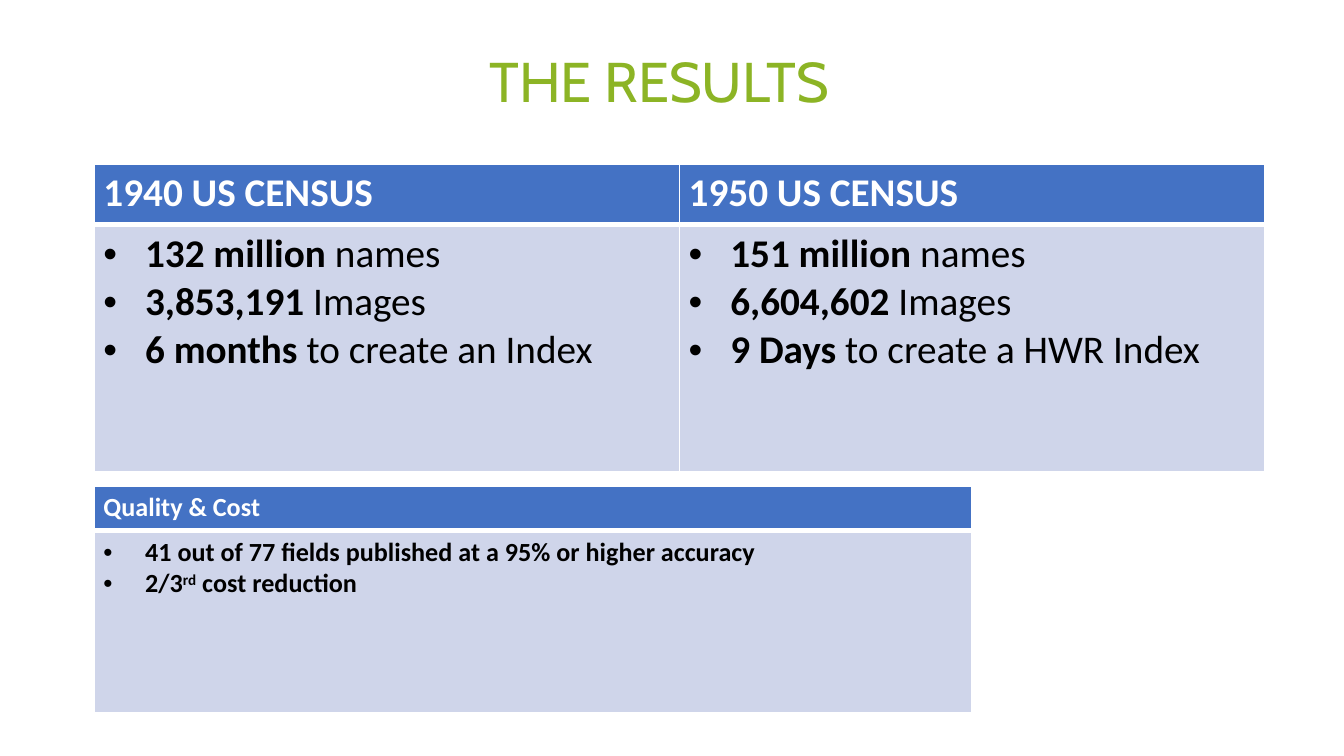
from lxml.etree import SubElement
from pptx import Presentation
from pptx.dml.color import RGBColor
from pptx.enum.text import MSO_ANCHOR, PP_ALIGN
from pptx.oxml.ns import qn
from pptx.util import Inches, Pt

GREEN = RGBColor(0x8C, 0xB4, 0x25)
BLUE = RGBColor(0x44, 0x72, 0xC4)
PALE = RGBColor(0xCF, 0xD5, 0xEA)
WHITE = RGBColor(0xFF, 0xFF, 0xFF)
BLACK = RGBColor(0, 0, 0)


def style(run, size, color, bold):
    font = run.font
    font.name = "Calibri"
    font.size = Pt(size)
    font.bold = bold
    font.color.rgb = color


def dress(cell, color, thick):
    cell.margin_left = cell.margin_right = Inches(0.07)
    cell.margin_top = cell.margin_bottom = Inches(0.04)
    props = cell._tc.get_or_add_tcPr()
    for side in ("lnL", "lnR", "lnT", "lnB"):
        width = Pt(3 if side == thick else 1)
        line = SubElement(props, qn("a:" + side), w=str(width))
        fill = SubElement(line, qn("a:solidFill"))
        SubElement(fill, qn("a:srgbClr"), val=str(WHITE))
    cell.fill.solid()
    cell.fill.fore_color.rgb = color


deck = Presentation()
deck.slide_width = Inches(10)
deck.slide_height = Inches(10 * 9 / 16)
slide = deck.slides.add_slide(deck.slide_layouts[6])

title = slide.shapes.add_textbox(Inches(0.5), Inches(0.36), Inches(8.81), Inches(0.86))
frame = title.text_frame
frame.word_wrap = True
frame.vertical_anchor = MSO_ANCHOR.TOP
frame.margin_left = frame.margin_right = Inches(0.09)
frame.margin_top = frame.margin_bottom = Inches(0.04)
frame.text = "THE RESULTS"
head = frame.paragraphs[0]
head.alignment = PP_ALIGN.CENTER
head.line_spacing = 0.9
font = head.runs[0].font
font.name = "Cabin"
font.size = Pt(30)
font.color.rgb = GREEN

census = [
    ("1940 US CENSUS", [
        [("132 million ", "b"), ("names", "")],
        [("3,853,191", "b"), (" Images", "")],
        [("6 months ", "b"), ("to create an Index", "")],
    ]),
    ("1950 US CENSUS", [
        [("151 million ", "b"), ("names", "")],
        [("6,604,602", "b"), (" Images", "")],
        [("9 Days ", "b"), ("to create a HWR Index", "")],
    ]),
]
quality = [
    ("Quality & Cost", [
        [("41 out of 77 fields published at a 95% or higher accuracy", "b")],
        [("2/3", "b"), ("rd", "b^"), (" cost reduction", "b")],
    ]),
]
tables = [
    (census, 1.22, 8.71, (0.45, 1.84), 21),
    (quality, 3.62, 6.53, (0.33, 1.35), 14),
]

for data, top, width, rows, size in tables:
    count = len(data)
    table = slide.shapes.add_table(
        2, count, Inches(0.7), Inches(top), Inches(width), Inches(sum(rows))
    ).table
    table.horz_banding = False
    for row, high in zip(table.rows, rows):
        row.height = Inches(high)
    for col, (label, items) in enumerate(data):
        cell = table.cell(0, col)
        dress(cell, BLUE, "lnB")
        cell.text_frame.text = label
        style(cell.text_frame.paragraphs[0].runs[0], size, WHITE, True)

        cell = table.cell(1, col)
        dress(cell, PALE, "lnT")
        body = cell.text_frame
        for row, parts in enumerate(items):
            para = body.add_paragraph() if row else body.paragraphs[0]
            props = para._p.get_or_add_pPr()
            props.set("marL", str(Inches(0.31)))
            props.set("indent", str(-Inches(0.31)))
            SubElement(props, qn("a:buFont")).set("typeface", "Arial")
            SubElement(props, qn("a:buChar")).set("char", "•")
            for text, flags in parts:
                run = para.add_run()
                run.text = text
                style(run, size, BLACK, "b" in flags)
                if "^" in flags:
                    run._r.get_or_add_rPr().set("baseline", "30000")

deck.save("out.pptx")
